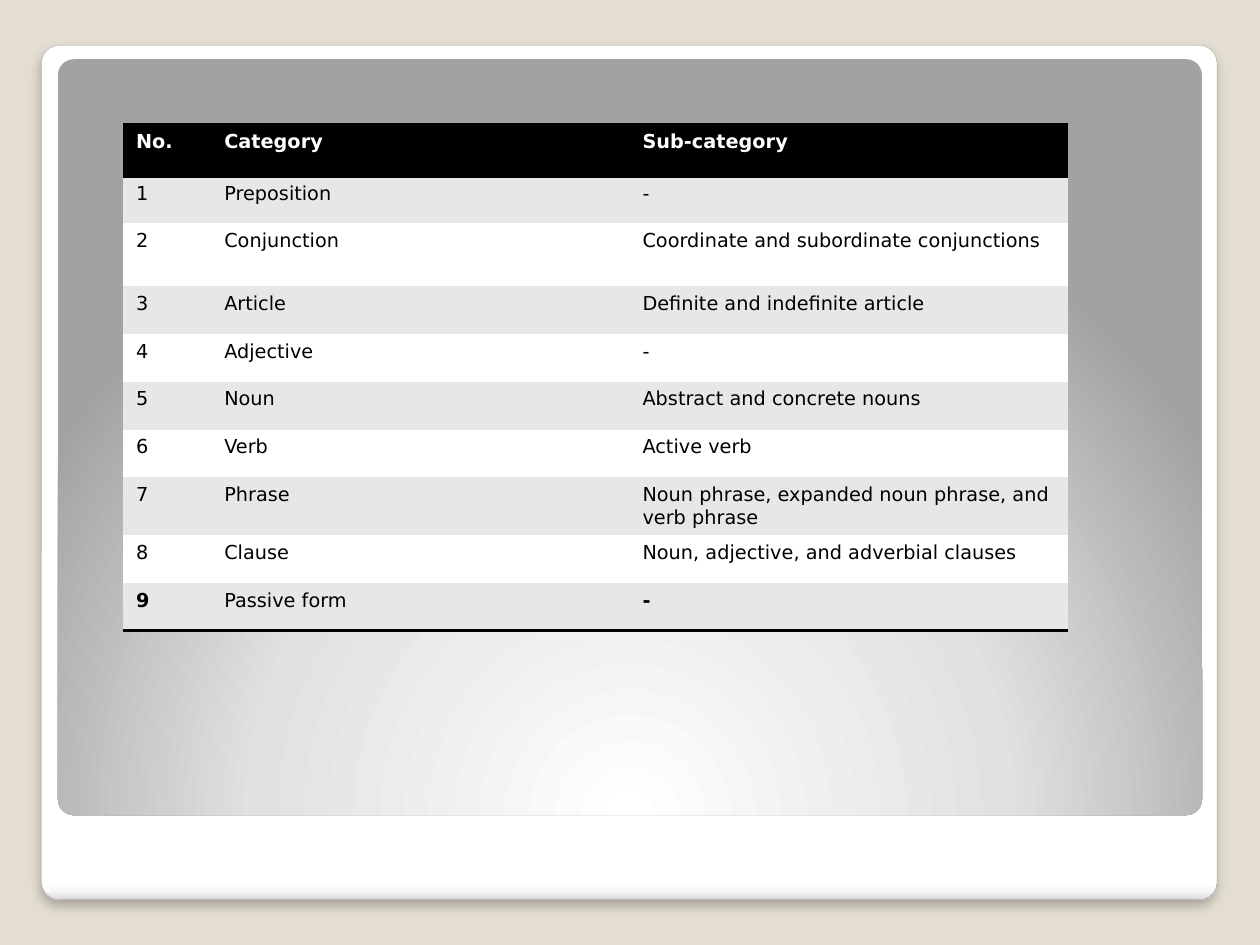
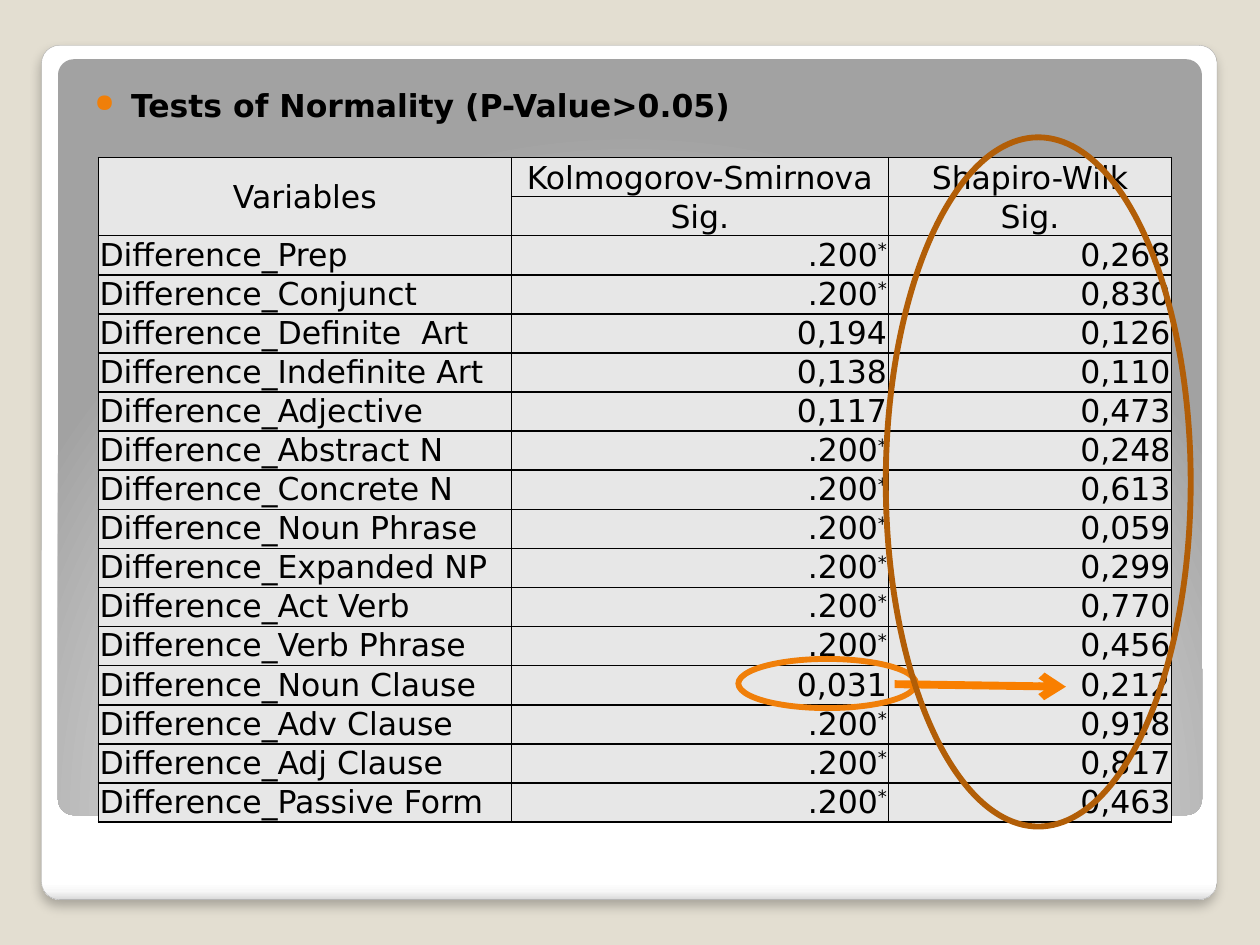
from lxml.etree import SubElement
from pptx import Presentation
from pptx.dml.color import RGBColor
from pptx.enum.shapes import MSO_CONNECTOR, MSO_SHAPE
from pptx.enum.text import MSO_ANCHOR, PP_ALIGN
from pptx.oxml.ns import qn
from pptx.util import Inches, Pt

# Content
CATEGORIES = [
    ("No.", "Category", "Sub-category"),
    ("1", "Preposition", "-"),
    ("2", "Conjunction", "Coordinate and subordinate conjunctions"),
    ("3", "Article", "Definite and indefinite article"),
    ("4", "Adjective", "-"),
    ("5", "Noun", "Abstract and concrete nouns"),
    ("6", "Verb", "Active verb"),
    ("7", "Phrase", "Noun phrase, expanded noun phrase, and verb phrase"),
    ("8", "Clause", "Noun, adjective, and adverbial clauses"),
    ("9", "Passive form", "-"),
]
CATEGORY_WIDTHS = [0.7, 3.32, 3.48]
CATEGORY_HEIGHTS = [0.41, 0.37, 0.5, 0.38, 0.38, 0.38, 0.38, 0.45, 0.38, 0.38]
BOLD_CELLS = {(9, 0), (9, 2)}

NORMALITY_TITLE = "Tests of Normality (P-Value>0.05)"
NORMALITY_HEADER = [
    ("Variables", "Kolmogorov-Smirnova", "Shapiro-Wilk"),
    ("", "Sig.", "Sig."),
]
NORMALITY_RESULTS = [
    ("Prep", ".200*", "0,268"),
    ("Conjunct", ".200*", "0,830"),
    ("Definite  Art", "0,194", "0,126"),
    ("Indefinite Art", "0,138", "0,110"),
    ("Adjective", "0,117", "0,473"),
    ("Abstract N", ".200*", "0,248"),
    ("Concrete N", ".200*", "0,613"),
    ("Noun Phrase", ".200*", "0,059"),
    ("Expanded NP", ".200*", "0,299"),
    ("Act Verb", ".200*", "0,770"),
    ("Verb Phrase", ".200*", "0,456"),
    ("Noun Clause", "0,031", "0,212"),
    ("Adv Clause", ".200*", "0,918"),
    ("Adj Clause", ".200*", "0,817"),
    ("Passive Form", ".200*", "0,463"),
]
NORMALITY_WIDTHS = [3.28, 2.99, 2.25]
NORMALITY_ROW_HEIGHT = 0.3

# Shared style
FONT = "DejaVu Sans"
BLACK = RGBColor(0x00, 0x00, 0x00)
WHITE = RGBColor(0xFF, 0xFF, 0xFF)
BEIGE = RGBColor(0xE3, 0xDE, 0xD1)
BAND = RGBColor(0xE7, 0xE7, 0xE7)
FRAME_LINE = RGBColor(0xA4, 0xA4, 0xA4)
ORANGE = RGBColor(0xF0, 0x7F, 0x09)
ARROW_ORANGE = RGBColor(0xF9, 0x7F, 0x00)
BROWN = RGBColor(0xB2, 0x5E, 0x07)
FRAME_STOPS = [(0, "FFFFFF"), (98, "FFFFFF"), (99, "F7F7F7"), (100, "DADADA")]
PANEL_STOPS = [(0, "FFFFFF"), (55, "E1E1E1"), (100, "A2A2A2")]
PLAIN_TABLE_STYLE = "{2D5ABB26-0587-4C30-8999-92F81FD0307C}"


def add_xml(parent, tag, **attributes):
    return SubElement(parent, qn(tag), {k: str(v) for k, v in attributes.items()})


def add_outline(slide, kind, box, line_color=None, line_width=0):
    shape = slide.shapes.add_shape(kind, *map(Inches, box))
    shape.shadow.inherit = False
    shape.fill.background()
    if line_color is None:
        shape.line.fill.background()
    else:
        shape.line.color.rgb = line_color
        shape.line.width = Pt(line_width)
    return shape


def set_gradient(shape, stops, radial):
    properties = shape.element.spPr
    gradient = add_xml(properties, "a:gradFill", rotWithShape=1)
    stop_list = add_xml(gradient, "a:gsLst")
    for position, color in stops:
        stop = add_xml(stop_list, "a:gs", pos=position * 1000)
        add_xml(stop, "a:srgbClr", val=color)
    if radial:
        circle = add_xml(gradient, "a:path", path="circle")
        add_xml(circle, "a:fillToRect", l=50000, t=175000, r=50000, b=-75000)
    else:
        add_xml(gradient, "a:lin", ang=90 * 60000, scaled=0)
    properties.replace(properties.find(qn("a:noFill")), gradient)


def add_framed_slide(deck):
    slide = deck.slides.add_slide(deck.slide_layouts[6])
    slide.background.fill.solid()
    slide.background.fill.fore_color.rgb = BEIGE

    # White frame with soft shadow
    frame = add_outline(slide, MSO_SHAPE.ROUNDED_RECTANGLE,
                        (0.33, 0.36, 9.33, 6.78), FRAME_LINE, 0.16)
    set_gradient(frame, FRAME_STOPS, radial=False)
    effects = frame.element.spPr.find(qn("a:effectLst"))
    shadow = add_xml(effects, "a:outerShdw", blurRad=Pt(6), dist=Pt(4),
                     dir=90 * 60000, algn="t", rotWithShape=0)
    shade = add_xml(shadow, "a:srgbClr", val="000000")
    add_xml(shade, "a:alpha", val=25000)

    # Grey panel
    panel = add_outline(slide, MSO_SHAPE.ROUNDED_RECTANGLE, (0.46, 0.47, 9.08, 6))
    set_gradient(panel, PANEL_STOPS, radial=True)
    for card in (frame, panel):
        card.adjustments[0] = 0.021
    return slide


def add_plain_table(slide, left, top, widths, heights):
    box = map(Inches, (left, top, sum(widths), sum(heights)))
    table = slide.shapes.add_table(len(heights), len(widths), *box).table
    table.first_row = table.horz_banding = False
    table._tbl.tblPr.find(qn("a:tableStyleId")).text = PLAIN_TABLE_STYLE
    for column, width in zip(table.columns, widths):
        column.width = Inches(width)
    for row, height in zip(table.rows, heights):
        row.height = Inches(height)
    return table


def fill_cell(cell, text, fill, size, color=BLACK, bold=False, sides="", border=1):
    properties = cell._tc.get_or_add_tcPr()
    for side in sides:
        line = add_xml(properties, f"a:ln{side}", w=Pt(border))
        solid = add_xml(line, "a:solidFill")
        add_xml(solid, "a:srgbClr", val=BLACK)
    cell.fill.solid()
    cell.fill.fore_color.rgb = fill
    paragraph = cell.text_frame.paragraphs[0]
    paragraph.font.size = Pt(size)
    value = text.removesuffix("*")
    for part in (value, text[len(value):]):
        if part:
            run = paragraph.add_run()
            run.text = part
            style_font(run.font, size, color, bold)
            if part == "*":
                run.font._element.set("baseline", "30000")
    return paragraph


def style_font(font, size, color, bold):
    font.name, font.size, font.bold = FONT, Pt(size), bold
    font.color.rgb = color


def build_categories(deck):
    slide = add_framed_slide(deck)
    table = add_plain_table(slide, 0.98, 0.99, CATEGORY_WIDTHS, CATEGORY_HEIGHTS)
    last = len(CATEGORIES) - 1
    for r, row in enumerate(CATEGORIES):
        header = r == 0
        fill = BLACK if header else BAND if r % 2 else WHITE
        sides = "TB" if header else "B" if r == last else ""
        for c, text in enumerate(row):
            fill_cell(table.cell(r, c), text, fill, 11, WHITE if header else BLACK,
                      header or (r, c) in BOLD_CELLS, sides, 2)


def build_normality(deck):
    slide = add_framed_slide(deck)

    # Bulleted title
    title = slide.shapes.add_textbox(*map(Inches, (0.55, 0.58, 8.95, 6.45))).text_frame
    title.word_wrap = True
    title.margin_left, title.margin_top = Inches(0.2), Inches(0.1)
    title.margin_right, title.margin_bottom = Inches(0.1), Inches(0.05)
    heading = title.paragraphs[0]
    heading.text = NORMALITY_TITLE
    heading.space_before = Pt(2.5)
    style_font(heading.runs[0].font, 18, BLACK, True)
    properties = heading._p.get_or_add_pPr()
    properties.set("marL", str(Inches(0.29)))
    properties.set("indent", str(Inches(-0.29)))
    add_xml(add_xml(properties, "a:buClr"), "a:srgbClr", val=ORANGE)
    add_xml(properties, "a:buSzPct", val=80000)
    add_xml(properties, "a:buChar", char="●")

    # Results table
    rows = NORMALITY_HEADER + [(f"Difference_{name}", *values)
                               for name, *values in NORMALITY_RESULTS]
    table = add_plain_table(slide, 0.78, 1.25, NORMALITY_WIDTHS,
                            [NORMALITY_ROW_HEIGHT] * len(rows))
    for r, row in enumerate(rows):
        header = r < len(NORMALITY_HEADER)
        for c, text in enumerate(row):
            cell = table.cell(r, c)
            paragraph = fill_cell(cell, text, BAND, 18, sides="LRTB")
            cell.margin_left = cell.margin_right = cell.margin_top = Inches(0.01)
            cell.margin_bottom = 0
            if header:
                paragraph.alignment = PP_ALIGN.CENTER
                cell.vertical_anchor = MSO_ANCHOR.BOTTOM
            elif c > 0:
                paragraph.alignment = PP_ALIGN.RIGHT
    variables = table.cell(0, 0)
    variables.merge(table.cell(1, 0))
    variables.vertical_anchor = MSO_ANCHOR.MIDDLE

    # Highlights: the low value, and the column that replaces it
    add_outline(slide, MSO_SHAPE.OVAL, (5.86, 5.23, 1.41, 0.39), ORANGE, 3.35)
    arrow = slide.shapes.add_connector(MSO_CONNECTOR.STRAIGHT,
                                       *map(Inches, (7.1, 5.43, 8.46, 5.45)))
    arrow.line.color.rgb = ARROW_ORANGE
    arrow.line.width = Pt(4.5)
    add_xml(arrow.line._get_or_add_ln(), "a:tailEnd", type="arrow")
    add_xml(arrow._element.spPr, "a:effectLst")
    add_outline(slide, MSO_SHAPE.OVAL, (7.03, 1.09, 2.42, 5.47), BROWN, 3.35)


def main():
    deck = Presentation()
    deck.slide_width, deck.slide_height = Inches(10), Inches(7.5)
    build_categories(deck)
    build_normality(deck)
    deck.save("out.pptx")


if __name__ == "__main__":
    main()
